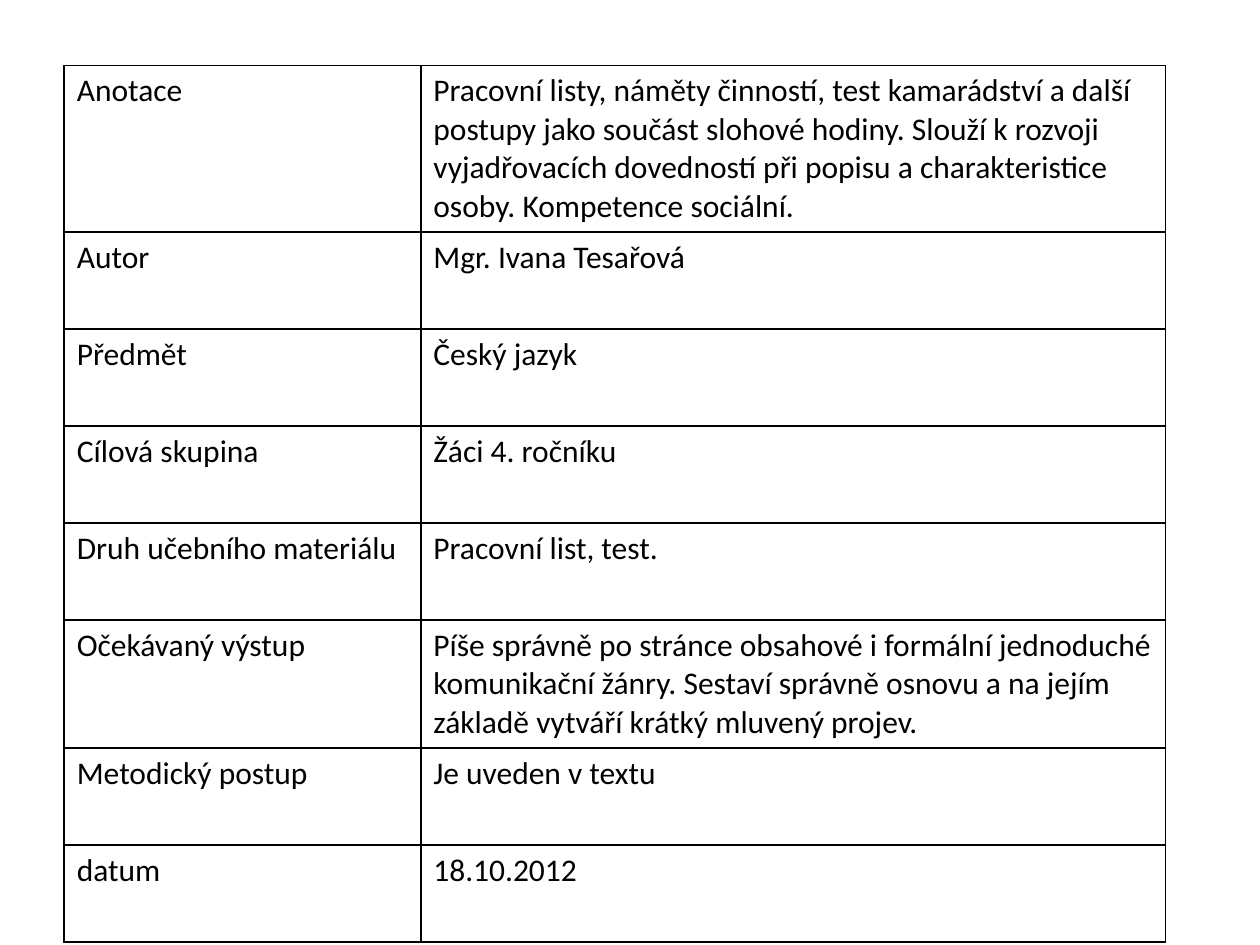
from lxml.etree import SubElement
from pptx import Presentation
from pptx.dml.color import RGBColor
from pptx.oxml.ns import qn
from pptx.util import Inches, Pt

BLACK = RGBColor(0, 0, 0)
ROW_HEIGHT = Inches(0.77)
COLUMN_WIDTHS = [Inches(2.83), Inches(5.91)]
TEXT_FORMAT = {"name": "Calibri", "size": Pt(18), "bold": False}
TABLE_FORMAT = {"first_row": False, "horz_banding": False}
BORDER_SIDES = ["a:lnL", "a:lnR", "a:lnT", "a:lnB"]

RECORD = [
    ("Anotace", "Pracovní listy, náměty činností, test kamarádství a další postupy "
                "jako součást slohové hodiny. Slouží k rozvoji vyjadřovacích dovedností "
                "při popisu a charakteristice osoby. Kompetence sociální."),
    ("Autor", "Mgr. Ivana Tesařová"),
    ("Předmět", "Český jazyk"),
    ("Cílová skupina", "Žáci 4. ročníku"),
    ("Druh učebního materiálu", "Pracovní list, test."),
    ("Očekávaný výstup", "Píše správně po stránce obsahové i formální jednoduché "
                         "komunikační žánry. Sestaví správně osnovu a na jejím základě "
                         "vytváří krátký mluvený projev."),
    ("Metodický postup", "Je uveden v textu"),
    ("datum", "18.10.2012"),
]


def add_borders(cell):
    properties = cell._tc.get_or_add_tcPr()
    for side in BORDER_SIDES:
        line = SubElement(properties, qn(side), w=str(Pt(1)))
        fill = SubElement(line, qn("a:solidFill"))
        SubElement(fill, qn("a:srgbClr"), val=str(BLACK))


deck = Presentation()
deck.slide_width, deck.slide_height = Inches(10), Inches(7.5)
page = deck.slides.add_slide(deck.slide_layouts[6])

table = page.shapes.add_table(
    len(RECORD), len(COLUMN_WIDTHS), Inches(0.51), Inches(0.52),
    sum(COLUMN_WIDTHS), ROW_HEIGHT * len(RECORD)).table
for name, value in TABLE_FORMAT.items():
    setattr(table, name, value)
for column, width in zip(table.columns, COLUMN_WIDTHS):
    column.width = width

for row, texts in zip(table.rows, RECORD):
    row.height = ROW_HEIGHT
    for cell, text in zip(row.cells, texts):
        add_borders(cell)
        cell.fill.background()
        span = cell.text_frame.paragraphs[0].add_run()
        span.text = text
        span.font.color.rgb = BLACK
        for name, value in TEXT_FORMAT.items():
            setattr(span.font, name, value)

deck.save("out.pptx")
